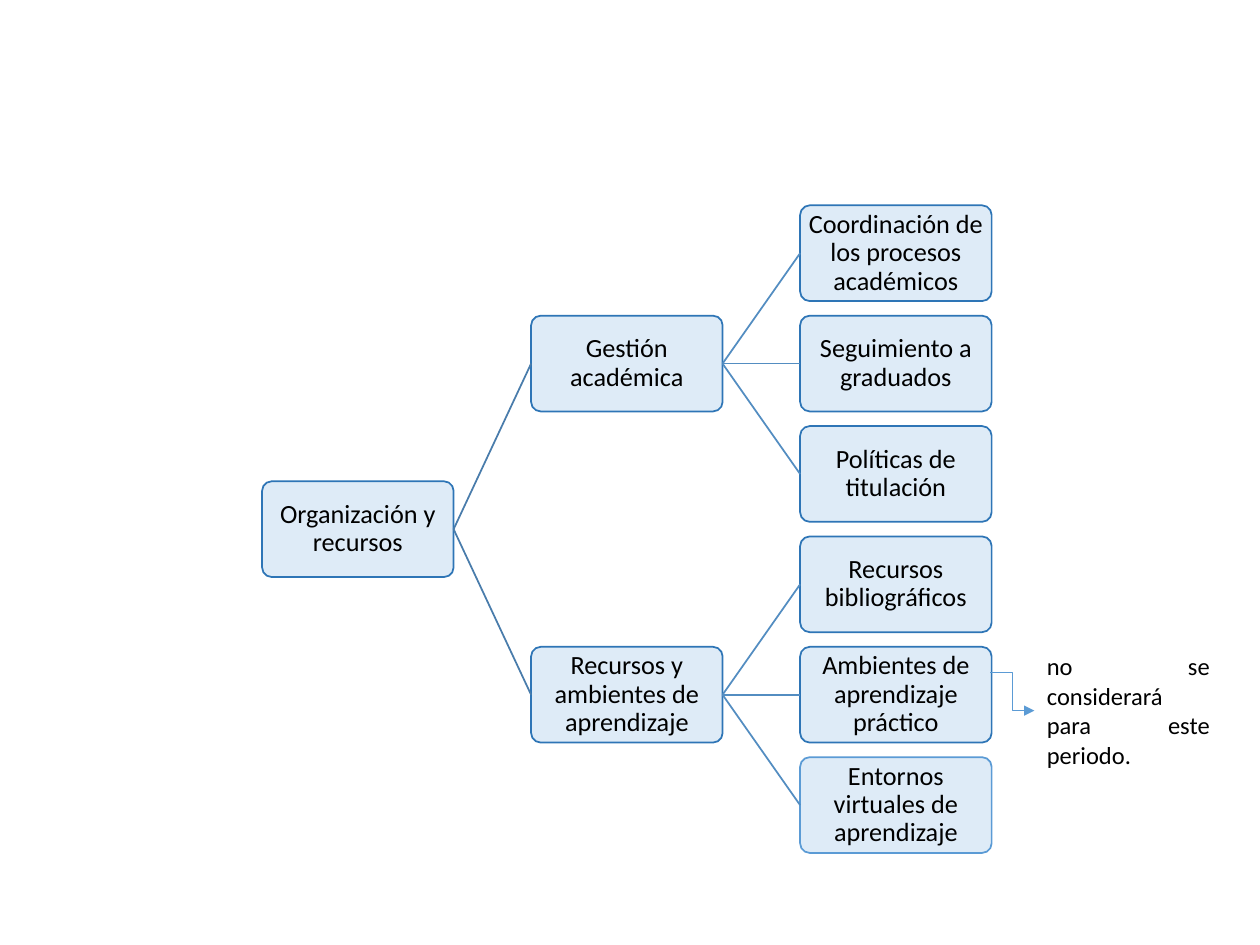
from pptx import Presentation
from pptx.dml.color import RGBColor
from pptx.enum.shapes import MSO_CONNECTOR, MSO_SHAPE
from pptx.enum.text import MSO_ANCHOR, MSO_AUTO_SIZE, PP_ALIGN
from pptx.oxml.ns import qn
from pptx.util import Inches, Pt
from lxml.etree import SubElement

HUES = {"fill": "DEEBF7", "edge": "2E75B6", "light": "5B9BD5",
        "trunk": "497CAB", "twig": "538DC1", "text": "000000"}
LEFT, TOP = 2.08, 1.63
WIDE, HIGH = 1.52, 0.76
STEP = (6.35 - LEFT) / 2
PITCH = (6.01 - TOP) / 5
SITE = {"left": 1, "right": 3}

ROOT = "Organización y recursos"
TREE = {
    "Gestión académica": [
        "Coordinación de los procesos académicos",
        "Seguimiento a graduados",
        "Políticas de titulación",
    ],
    "Recursos y ambientes de aprendizaje": [
        "Recursos bibliográficos",
        "Ambientes de aprendizaje práctico",
        "Entornos virtuales de aprendizaje",
    ],
}


def tint(name):
    return RGBColor.from_string(HUES[name])


def write(frame, text, size, align):
    para = frame.paragraphs[0]
    para.alignment = align
    run = para.add_run()
    run.text = text
    run.font.name = "Calibri"
    run.font.size = Pt(size)
    run.font.color.rgb = tint("text")
    return para


def add_node(slide, text, col, row, edge="edge"):
    node = slide.shapes.add_shape(
        MSO_SHAPE.ROUNDED_RECTANGLE, Inches(LEFT + col * STEP),
        Inches(TOP + row * PITCH), Inches(WIDE), Inches(HIGH))
    node.adjustments[0] = 0.1
    node.shadow.inherit = False
    node.fill.solid()
    node.fill.fore_color.rgb = tint("fill")
    node.line.color.rgb = tint(edge)
    node.line.width = Pt(1)
    frame = node.text_frame
    frame.word_wrap = True
    frame.vertical_anchor = MSO_ANCHOR.MIDDLE
    frame.margin_left = frame.margin_right = Inches(0.01)
    frame.margin_top = frame.margin_bottom = Inches(0.01)
    write(frame, text, 15, PP_ALIGN.CENTER).line_spacing = 0.9
    return node


def add_line(slide, kind, ends, hue, width):
    line = slide.shapes.add_connector(kind, *map(Inches, ends))
    line.line.color.rgb = tint(hue)
    line.line.width = Pt(width)
    SubElement(line._element.spPr, qn("a:effectLst"))
    return line


def link(slide, start, end, hue):
    line = add_line(slide, MSO_CONNECTOR.STRAIGHT, (0, 0, 0, 0), hue, 1)
    line.begin_connect(start, SITE["right"])
    line.end_connect(end, SITE["left"])


def add_note(slide, text):
    box = slide.shapes.add_textbox(*map(Inches, (8.21, 5.12, 1.49, 1.04)))
    box.text_frame.word_wrap = True
    box.text_frame.auto_size = MSO_AUTO_SIZE.SHAPE_TO_FIT_TEXT
    write(box.text_frame, text, 14, PP_ALIGN.JUSTIFY)
    arrow = add_line(slide, MSO_CONNECTOR.ELBOW,
                     (7.86, 5.34, 8.21, 5.64), "light", 0.5)
    SubElement(arrow.line._get_or_add_ln(), qn("a:tailEnd"), type="triangle")


def main():
    deck = Presentation()
    deck.slide_width, deck.slide_height = Inches(10), Inches(7.5)
    slide = deck.slides.add_slide(deck.slide_layouts[6])
    root = add_node(slide, ROOT, 0, 2.5)
    row = 0
    for name, leaves in TREE.items():
        branch = add_node(slide, name, 1, row + (len(leaves) - 1) / 2)
        link(slide, root, branch, "trunk")
        for text in leaves:
            edge = "light" if text.startswith("Entornos") else "edge"
            link(slide, branch, add_node(slide, text, 2, row, edge), "twig")
            row += 1
    add_note(slide, "no se considerará para este periodo.")
    deck.save("out.pptx")


if __name__ == "__main__":
    main()
